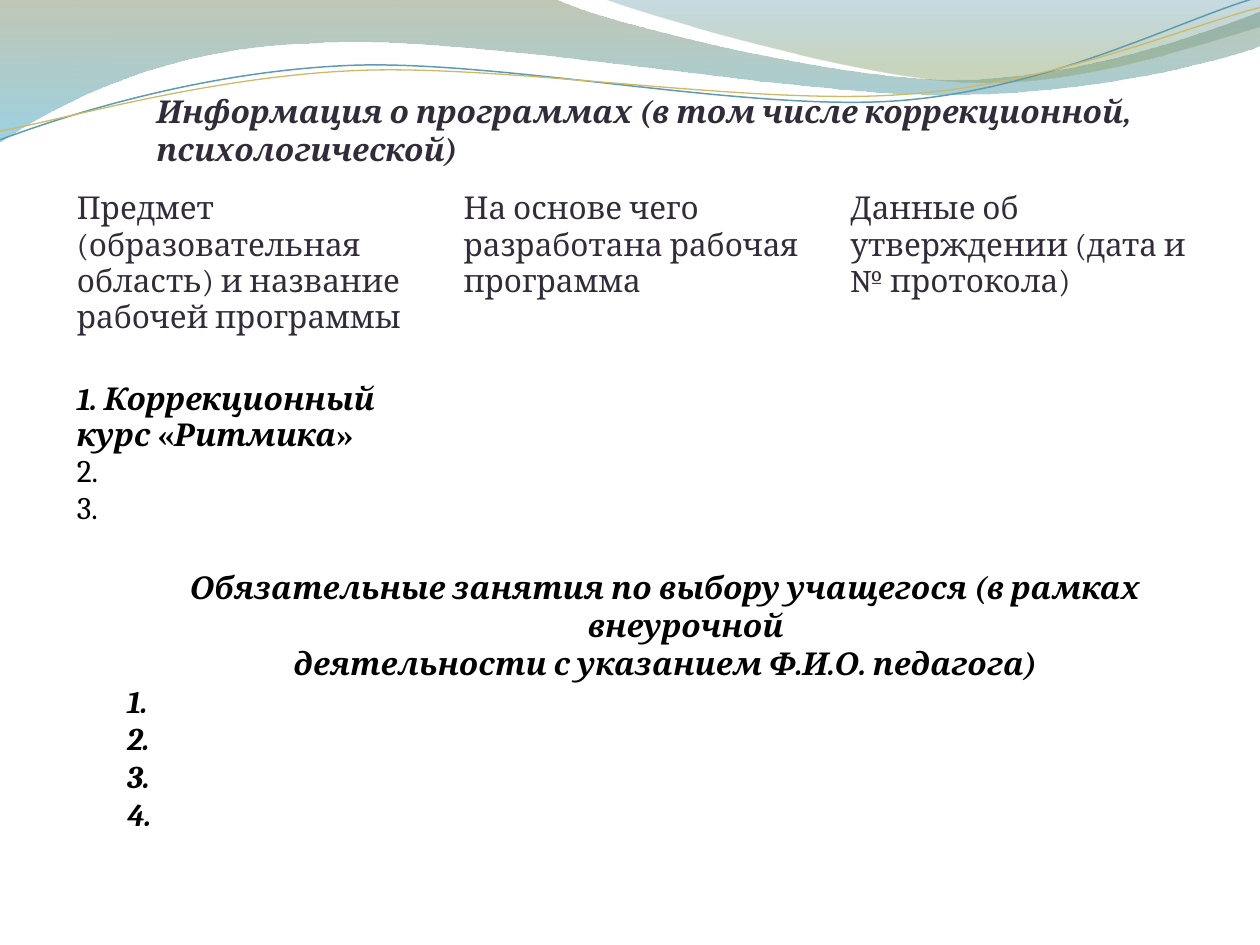
from lxml import etree
from pptx import Presentation
from pptx.dml.color import RGBColor
from pptx.enum.text import MSO_ANCHOR, MSO_AUTO_SIZE, PP_ALIGN
from pptx.oxml.ns import qn
from pptx.util import Inches, Pt

LEFT, MID, JUST = PP_ALIGN.LEFT, PP_ALIGN.CENTER, PP_ALIGN.JUSTIFY
TOP, FIXED = MSO_ANCHOR.TOP, MSO_AUTO_SIZE.NONE
FONT, SIZE = "Cambria", 18
DARK, BLACK, WHITE = "322B39", "000000", "FFFFFF"
GRID = 100  # path units per inch

# Content
TITLE = "Информация о программах (в том числе коррекционной, психологической)"
HEADS = [
    "Предмет (образовательная область) и название рабочей программы",
    "На основе чего разработана рабочая программа",
    "Данные об утверждении (дата и № протокола)",
]
# Each line holds runs of (text, bold, italic)
COURSES = [
    [("1. Коррекционный курс ", True, True), ("«", True, False),
     ("Ритмика", True, True), ("»", True, False)],
    [("2.", False, False)],
    [("3.", False, False)],
]
CLASSES = [
    ("Обязательные занятия по выбору учащегося (в рамках внеурочной ", MID),
    ("деятельности с указанием Ф.И.О. педагога)", MID),
] + [(f"{n}.", JUST) for n in range(1, 5)]

# Waves: a pair is a line end, six numbers are a Bezier curve (inches)
BANDS = [
    ([(0, 0), (4.4, -0.01), (4.76, 0.17, 6.64, 0.63, 7.58, 0.63),
      (8.53, 0.63, 9.58, 0.26, 10, 0.09), (10.01, 0.36),
      (9.83, 0.44, 8.7, 0.76, 7.46, 0.75), (6.22, 0.75, 3.82, 0.28, 2.57, 0.34),
      (1.29, 0.36, 0.46, 0.83, -0.01, 1.13)],
     [(0, "74855E", 45), (1, "4AACCE", 55)]),
    ([(4.79, -0.01), (5.09, 0.11, 6.82, 0.62, 7.69, 0.65),
      (8.56, 0.69, 9.61, 0.32, 10, 0.21), (10, 0)],
     [(0, "45889F", 30), (0.8, "8AA36D", 45)]),
]
CURVES = [
    ([(0, 1.11), (0.48, 0.93, 1.58, 0.57, 2.77, 0.52),
      (3.95, 0.47, 5.93, 0.89, 7.13, 0.8), (8.33, 0.71, 9.38, 0.15, 9.98, -0.02)],
     "5E9CB1", 0.85),
    ([(0, 1.04), (0.47, 0.96, 1.64, 0.61, 2.83, 0.56),
      (4.03, 0.51, 5.97, 0.84, 7.17, 0.75), (8.36, 0.67, 9.41, 0.21, 10, 0.06)],
     "CEB966", 0.75),
]


def rgb(code):
    return RGBColor.from_string(code)


def style(font, color, bold=None, italic=None):
    font.name, font.size = FONT, Pt(SIZE)
    font.color.rgb = rgb(color)
    font.bold, font.italic = bold, italic


def place(shape, *box):
    shape.left, shape.top, shape.width, shape.height = map(Inches, box)
    frame = shape.text_frame
    frame.word_wrap, frame.auto_size = True, FIXED
    frame.vertical_anchor = TOP
    return frame


def wave(shapes, parts, close):
    """Draw the corners as a freeform, then bend its sides into curves."""
    parts = [[round(v * GRID) for v in part] for part in parts]
    ends = [part[-2:] for part in parts]
    left, top = (min(axis) for axis in zip(*ends))
    pen = shapes.build_freeform(*ends[0], scale=Inches(1) / GRID)
    pen.add_line_segments(ends[1:], close=close)
    shape = pen.convert_to_shape()
    shape.shadow.inherit = False
    sides = list(shape._element.iter(qn("a:lnTo")))
    for side, part in zip(sides, parts[1:]):
        if len(part) == 6:
            bend = etree.Element(qn("a:cubicBezTo"))
            for x, y in zip(part[::2], part[1::2]):
                etree.SubElement(bend, qn("a:pt"), x=str(x - left), y=str(y - top))
            side.getparent().replace(side, bend)
    return shape


prs = Presentation()
prs.slide_width, prs.slide_height = Inches(10), Inches(7.5)
slide = prs.slides.add_slide(prs.slide_layouts[1])
shapes = slide.shapes
title, body = slide.placeholders

# Waves across the top
for parts, stops in BANDS:
    band = wave(shapes, parts, True)
    band.line.fill.background()
    band.fill.gradient()
    band.fill.gradient_angle = 270
    for stop, (pos, color, _) in zip(band.fill.gradient_stops, stops):
        stop.position, stop.color.rgb = pos, rgb(color)
    tints = list(band._element.spPr.iter(qn("a:srgbClr")))
    for tint, (_, _, share) in zip(tints, stops):
        etree.SubElement(tint, qn("a:alpha"), val=str(share * 1000))
for parts, color, width in CURVES:
    curve = wave(shapes, parts, False)
    curve.fill.background()
    curve.line.color.rgb, curve.line.width = rgb(color), Pt(width)

# Optional classes
frame = place(body, 0.91, 4.46, 8.74, 2.52)
for i, (text, align) in enumerate(CLASSES):
    para = frame.add_paragraph() if i else frame.paragraphs[0]
    para.text, para.alignment, para.space_before = text, align, Pt(0)
    style(para.font, BLACK, True, True)
    props = para._p.get_or_add_pPr()
    props.set("marL", str(Inches(0.38)))
    props.set("indent", str(-Inches(0.38)))
    props.insert_element_before(etree.Element(qn("a:buNone")),
                                "a:tabLst", "a:defRPr", "a:extLst")

# Programme table
table = shapes.add_table(2, len(HEADS), Inches(0.51), Inches(1.47),
                         Inches(9.21), Inches(2.83)).table
table.horz_banding = False
for row, height in zip(table.rows, (1.51, 1.32)):
    row.height = Inches(height)
    for cell in row.cells:
        cell.fill.solid()
        cell.fill.fore_color.rgb = rgb(WHITE)
for cell, text in zip(table.rows[0].cells, HEADS):
    cell.text = text
    style(cell.text_frame.paragraphs[0].font, DARK, False)
frame = table.cell(1, 0).text_frame
for i, line in enumerate(COURSES):
    para = frame.add_paragraph() if i else frame.paragraphs[0]
    for text, bold, italic in line:
        run = para.add_run()
        run.text = text
        style(run.font, BLACK, bold, italic)

# Title, in front of the waves
para = place(title, 1.14, 0.68, 8.5, 1.01).paragraphs[0]
para.text, para.alignment = TITLE, LEFT
style(para.font, DARK, True, True)
shapes._spTree.append(title._element)

prs.save("out.pptx")
